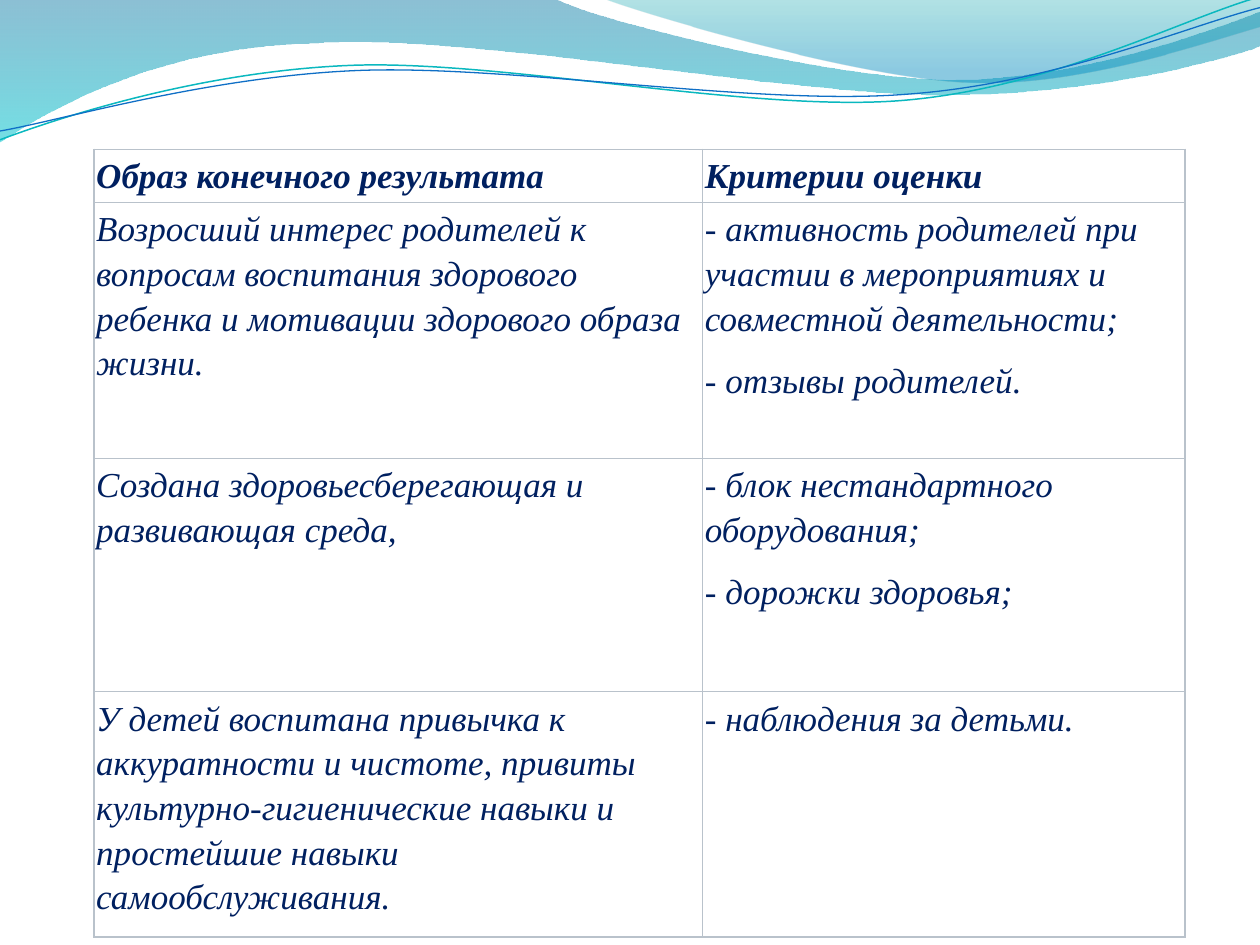
"""Build a slide with a wave header and a table of results and criteria."""
from math import cos, radians, sin
from lxml.etree import SubElement
from pptx import Presentation
from pptx.dml.color import RGBColor
from pptx.oxml.ns import qn
from pptx.util import Cm, Pt

INCH = 2.54


def tint(code):
    return RGBColor.from_string(code)


def draw(slide, box, parts, turn=0):
    left, top, wide, high = box
    pen = slide.shapes.build_freeform(Cm(left * INCH), Cm(top * INCH))
    pen.add_line_segments([(Cm((left + wide) * INCH), Cm((top + high) * INCH))], close=False)
    shape = pen.convert_to_shape()
    shape.shadow.inherit = False
    shape.rotation = -turn % 360
    path = next(shape._element.iter(qn("a:path")))
    for node in list(path):
        path.remove(node)
    co, si = cos(radians(turn)), sin(radians(turn))
    for kind, *nums in parts:
        step = SubElement(path, qn("a:" + kind))
        for x, y in zip(nums[::2], nums[1::2]):
            dx, dy = x - left - wide / 2, y - top - high / 2
            px, py = dx * co - dy * si + wide / 2, dx * si + dy * co + high / 2
            SubElement(step, qn("a:pt"), x=str(Cm(px * INCH)), y=str(Cm(py * INCH)))
    return shape


prs = Presentation()
prs.slide_width, prs.slide_height = Cm(25.4), Cm(19.05)
slide = prs.slides.add_slide(prs.slide_layouts[6])

M, L, C, Z = "moveTo", "lnTo", "cubicBezTo", "close"
waves = [
    ((-0.01, -0.01, 10.02, 1.14),
     [(M, 0, 0), (L, 4.4, -0.01), (C, 4.76, 0.17, 6.64, 0.63, 7.58, 0.63),
      (C, 8.53, 0.63, 9.58, 0.26, 10, 0.09), (L, 10.01, 0.36),
      (C, 9.83, 0.44, 8.7, 0.76, 7.46, 0.75), (C, 6.22, 0.75, 3.82, 0.28, 2.57, 0.34),
      (C, 1.29, 0.36, 0.46, 0.83, -0.01, 1.13), (L, 0, 0), (Z,)],
     [(0, "0074A1", 45), (1, "00C6CF", 55)]),
    ((4.79, -0.01, 5.21, 0.7),
     [(M, 4.79, -0.01), (C, 5.09, 0.11, 6.82, 0.62, 7.69, 0.65),
      (C, 8.56, 0.69, 9.61, 0.32, 10, 0.21), (L, 10, 0), (L, 4.79, -0.01), (Z,)],
     [(0, "00A1A9", 30), (0.8, "008BBF", 45)]),
]
for box, parts, stops in waves:
    wave = draw(slide, box, parts)
    wave.line.fill.background()
    wave.fill.gradient()
    wave.fill.gradient_angle = 270
    for stop, (place, code, alpha) in zip(wave.fill.gradient_stops, stops):
        stop.position = place
        stop.color.rgb = tint(code)
    for node, (place, code, alpha) in zip(wave._element.spPr.iter(qn("a:srgbClr")), stops):
        SubElement(node, qn("a:alpha"), val=str(alpha * 1000))

curves = [
    ((-0.02, 0.22, 10.02, 0.71),
     [(M, 0, 1.11), (C, 0.48, 0.93, 1.58, 0.57, 2.77, 0.52),
      (C, 3.95, 0.47, 5.93, 0.89, 7.13, 0.8), (C, 8.33, 0.71, 9.38, 0.15, 9.98, -0.02)],
     "0AB8BF", 0.85),
    ((-0.02, 0.3, 10.03, 0.58),
     [(M, 0, 1.04), (C, 0.47, 0.96, 1.64, 0.61, 2.83, 0.56),
      (C, 4.03, 0.51, 5.97, 0.84, 7.17, 0.75), (C, 8.36, 0.67, 9.41, 0.21, 10, 0.06)],
     "0F6FC6", 0.75),
]
for box, parts, code, width in curves:
    curve = draw(slide, box, parts, 2.7)
    curve.fill.background()
    curve.line.color.rgb = tint(code)
    curve.line.width = Pt(width)

rows = [
    ("Образ конечного результата", "Критерии оценки"),
    ("Возросший интерес родителей к вопросам воспитания здорового ребенка "
     "и мотивации здорового образа жизни.",
     "- активность родителей при участии в мероприятиях и совместной деятельности;\n"
     "- отзывы родителей."),
    ("Создана здоровьесберегающая и развивающая среда,",
     "- блок нестандартного оборудования;\n- дорожки здоровья;"),
    ("У детей воспитана привычка к аккуратности и чистоте, привиты "
     "культурно-гигиенические навыки и простейшие навыки самообслуживания.",
     "- наблюдения за детьми."),
]
widths = [12.27, 9.73]
heights = [1.07, 5.16, 4.7, 4.95]
table = slide.shapes.add_table(len(rows), 2, Cm(1.89), Cm(3.01),
                               Cm(sum(widths)), Cm(sum(heights))).table
for col, width in zip(table.columns, widths):
    col.width = Cm(width)
for r, (row, height) in enumerate(zip(rows, heights)):
    table.rows[r].height = Cm(height)
    for c, text in enumerate(row):
        cell = table.cell(r, c)
        cell.margin_left = cell.margin_right = Cm(0.05)
        cell.margin_top = cell.margin_bottom = Cm(0.05)
        props = cell._tc.get_or_add_tcPr()
        for side in "LRTB":
            edge = SubElement(props, qn("a:ln" + side), w=str(Pt(1)))
            SubElement(SubElement(edge, qn("a:solidFill")), qn("a:srgbClr"), val="B9C2CB")
        cell.fill.solid()
        cell.fill.fore_color.rgb = tint("FFFFFF")
        cell.text_frame.text = text
        for para in cell.text_frame.paragraphs:
            para.line_spacing = 1.15
            para.space_after = Pt(10)
            for run in para.runs:
                font = run.font
                font.name, font.size = "Times New Roman", Pt(20)
                font.bold, font.italic = r == 0, True
                font.color.rgb = tint("002060")

prs.save("out.pptx")
